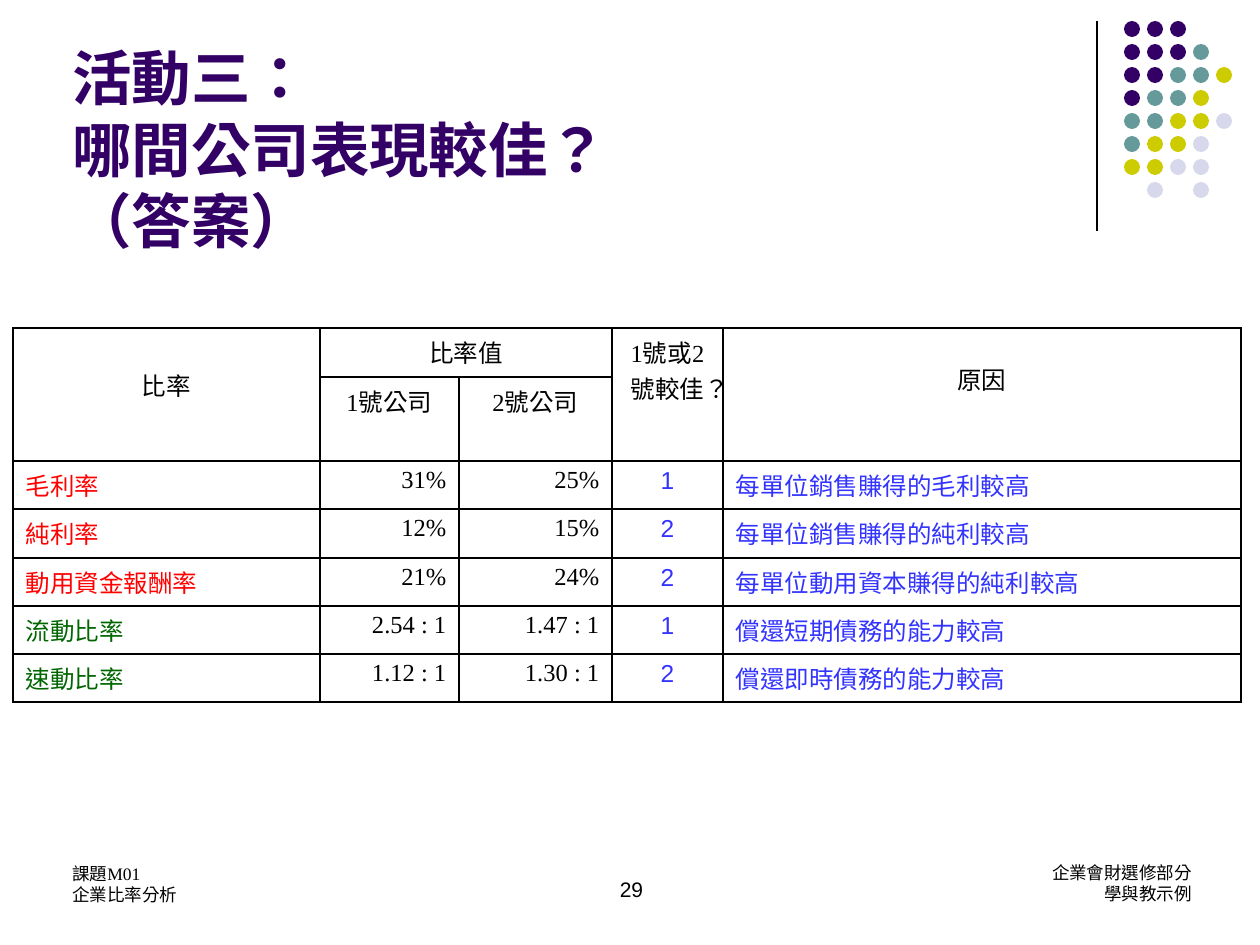
from dataclasses import dataclass

from lxml.etree import SubElement
from pptx import Presentation
from pptx.dml.color import RGBColor
from pptx.enum.lang import MSO_LANGUAGE_ID
from pptx.enum.shapes import MSO_CONNECTOR, MSO_SHAPE
from pptx.enum.text import MSO_ANCHOR, PP_ALIGN
from pptx.oxml.ns import qn
from pptx.util import Emu, Pt

EMU_PER_PX = 914400 / 126


def px(n):
    return Emu(round(n * EMU_PER_PX))


@dataclass(frozen=True)
class Theme:
    black: str = "000000"
    purple: str = "330066"
    teal: str = "669999"
    olive: str = "CCCC00"
    lilac: str = "D8D8EC"
    red: str = "FF0000"
    green: str = "006600"
    blue: str = "3333FF"
    sans: str = "Arial"
    serif: str = "Times New Roman"
    casual: str = "Comic Neue"
    title: int = 34
    body: int = 14
    number: int = 12
    footer: int = 10


THEME = Theme()


def write(tf, text, *, size=THEME.body, font=THEME.serif, color=THEME.black,
          bold=False, align=PP_ALIGN.LEFT, leading=None):
    for i, line in enumerate(text.split("\n")):
        p = tf.paragraphs[0] if i == 0 else tf.add_paragraph()
        p.text = line
        p.alignment = align
        if leading:
            p.line_spacing = Pt(leading)
        for r in p.runs:
            r.font.size = Pt(size)
            r.font.name = font
            r.font.bold = bold
            r.font.language_id = MSO_LANGUAGE_ID.TRADITIONAL_CHINESE
            r.font.color.rgb = RGBColor.from_string(color)


class Deck:
    def __init__(self, theme, width, height):
        self.theme = theme
        self.prs = Presentation()
        self.prs.slide_width, self.prs.slide_height = px(width), px(height)
        self.s = self.prs.slides.add_slide(self.prs.slide_layouts[6])

    def line(self, x1, y1, x2, y2):
        cn = self.s.shapes.add_connector(
            MSO_CONNECTOR.STRAIGHT, px(x1), px(y1), px(x2), px(y2))
        cn.line.color.rgb = RGBColor.from_string(self.theme.black)
        cn.line.width = Pt(0.75)
        SubElement(cn.element.spPr, qn("a:effectLst"))

    def dot(self, x, y, size, color):
        sp = self.s.shapes.add_shape(MSO_SHAPE.OVAL, px(x), px(y), px(size), px(size))
        sp.shadow.inherit = False
        sp.fill.solid()
        sp.fill.fore_color.rgb = RGBColor.from_string(color)
        sp.line.fill.background()

    def text(self, x, y, w, h, text, *, anchor=MSO_ANCHOR.TOP, wrap=True, top=6, **style):
        tf = self.s.shapes.add_textbox(px(x), px(y), px(w), px(h)).text_frame
        tf.word_wrap = wrap
        tf.vertical_anchor = anchor
        tf.margin_top = px(top)
        write(tf, text, **style)

    def table(self, x, y, cols, rows):
        frame = self.s.shapes.add_table(
            len(rows), len(cols), px(x), px(y), px(sum(cols)), px(sum(rows)))
        table = frame.table
        for column, w in zip(table.columns, cols):
            column.width = px(w)
        for row, h in zip(table.rows, rows):
            row.height = px(h)
        for cell in table.iter_cells():
            self.border(cell)
            cell.fill.background()
        return table

    def border(self, cell):
        tcPr = cell._tc.get_or_add_tcPr()
        for side in ("lnL", "lnR", "lnT", "lnB"):
            ln = SubElement(tcPr, qn(f"a:{side}"), w=str(Pt(1)))
            fill = SubElement(ln, qn("a:solidFill"))
            SubElement(fill, qn("a:srgbClr"), val=self.theme.black)

    def cell(self, table, row, col, text, *, span=(1, 1), top=6, **style):
        cell = table.cell(row, col)
        if span != (1, 1):
            cell.merge(table.cell(row + span[0] - 1, col + span[1] - 1))
        cell.margin_top = px(top)
        write(cell.text_frame, text, **style)


def add_dots(deck):
    t = deck.theme
    colors = {"P": t.purple, "T": t.teal, "O": t.olive, "L": t.lilac}
    pattern = ("PPP", "PPPT", "PPTTO", "PTTO", "TTOOL", "TOOL", "OOLL", ".L.L")
    for row, line in enumerate(pattern):
        for col, key in enumerate(line):
            if key in colors:
                deck.dot(1124 + 23 * col, 21 + 23 * row, 16, colors[key])


def add_ratios(deck):
    t = deck.theme
    table = deck.table(13, 328, [307, 139, 153, 111, 518],
                       [49, 84, 48, 49, 48, 48, 48])
    headers = (
        (0, 0, "比率", (2, 1), 39, t.sans),
        (0, 1, "比率值", (1, 2), 6, t.serif),
        (0, 3, "1號或2號較佳？", (2, 1), 6, t.serif),
        (0, 4, "原因", (2, 1), 33, t.serif),
        (1, 1, "1號公司", (1, 1), 6, t.serif),
        (1, 2, "2號公司", (1, 1), 6, t.serif),
    )
    for row, col, text, span, top, font in headers:
        deck.cell(table, row, col, text, span=span, top=top, font=font,
                  align=PP_ALIGN.CENTER)
    ratios = (
        ("毛利率", "31%", "25%", "1", "每單位銷售賺得的毛利較高", t.red),
        ("純利率", "12%", "15%", "2", "每單位銷售賺得的純利較高", t.red),
        ("動用資金報酬率", "21%", "24%", "2", "每單位動用資本賺得的純利較高", t.red),
        ("流動比率", "2.54 : 1", "1.47 : 1", "1", "償還短期債務的能力較高", t.green),
        ("速動比率", "1.12 : 1", "1.30 : 1", "2", "償還即時債務的能力較高", t.green),
    )
    for row, (name, first, second, better, reason, color) in enumerate(ratios, 2):
        deck.cell(table, row, 0, name, font=t.casual, color=color)
        deck.cell(table, row, 1, first, align=PP_ALIGN.RIGHT)
        deck.cell(table, row, 2, second, align=PP_ALIGN.RIGHT)
        deck.cell(table, row, 3, better, font=t.sans, color=t.blue, align=PP_ALIGN.CENTER)
        deck.cell(table, row, 4, reason, font=t.casual, color=t.blue)


def main():
    t = THEME
    deck = Deck(t, 1260, 945)
    deck.line(1097, 21, 1097, 231)
    add_dots(deck)
    deck.text(1038, 856, 166, 77, "企業會財選修部分\n學與教示例", wrap=False,
              size=t.footer, align=PP_ALIGN.RIGHT, leading=12)
    deck.text(60, 857, 446, 63, "課題M01\n企業比率分析", size=t.footer, leading=12)
    deck.text(432, 844, 399, 63, "29", top=33, size=t.number, font=t.sans,
              align=PP_ALIGN.CENTER)
    deck.text(60, 83, 1040, 179, "活動三：\v哪間公司表現較佳？\v（答案）",
              anchor=MSO_ANCHOR.BOTTOM, size=t.title, font=t.sans,
              color=t.purple, bold=True, leading=41)
    add_ratios(deck)
    deck.prs.save("out.pptx")


if __name__ == "__main__":
    main()
